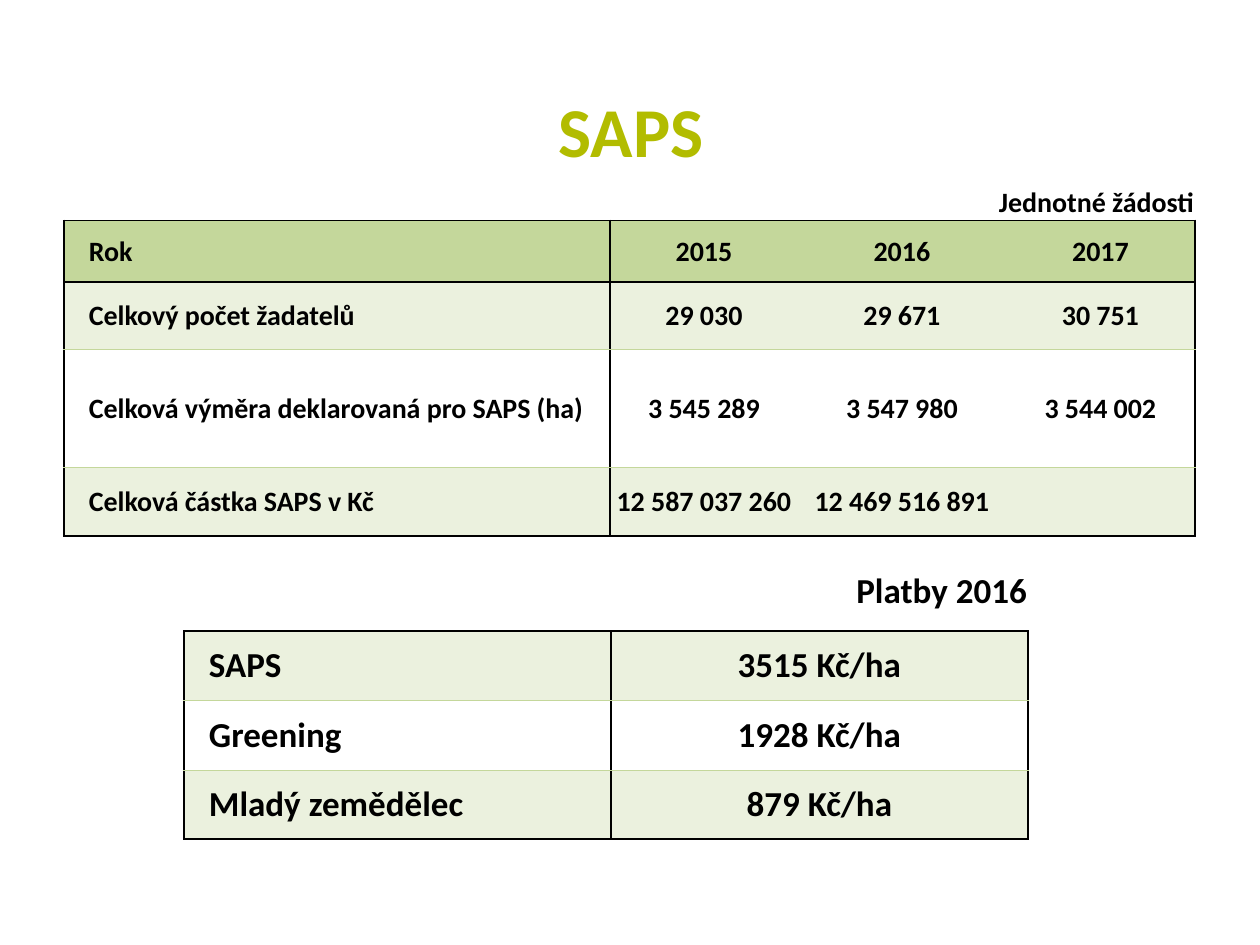
"""Build the SAPS slide with its applications table and payments table."""
from dataclasses import dataclass

from lxml import etree
from pptx import Presentation
from pptx import util as u
from pptx.dml.color import RGBColor
from pptx.enum import text
from pptx.oxml.ns import qn

LEFT, MID, RIGHT = text.PP_ALIGN.LEFT, text.PP_ALIGN.CENTER, text.PP_ALIGN.RIGHT


@dataclass(frozen=True)
class Theme:
    """Colours, type sizes and line widths."""
    font: str = "Calibri"
    ink: str = "000000"
    lime: str = "B2BC00"
    head: str = "C4D79B"
    pale: str = "EBF1DE"
    title: int = 40
    large: int = 20
    small: int = 16
    thick: float = 1
    thin: float = 0.5


def px(n):
    """Turn pixels into EMU."""
    return u.Emu(round(n * 914400 / 126))


def put(obj, vals):
    """Set attributes from a dict."""
    for key, val in vals.items():
        setattr(obj, key, val)


class Deck:
    """Hold the theme and the current slide."""

    def __init__(self, theme):
        """Start a file with one title-only slide."""
        self.theme = theme
        self.file = Presentation()
        put(self.file, {"slide_width": px(1260), "slide_height": px(945)})
        self.slide = self.file.slides.add_slide(self.file.slide_layouts[5])

    def label(self, para, words, size, color, align):
        """Add bold words to a paragraph."""
        para.alignment = align
        run = para.add_run()
        run.text = words
        put(run.font, {"name": self.theme.font, "size": u.Pt(size), "bold": True})
        run.font.color.rgb = RGBColor.from_string(color)

    def title(self, words, box):
        """Place and fill the title."""
        shape = self.slide.shapes.title
        put(shape, dict(zip(("left", "top", "width", "height"), map(px, box))))
        shape.text_frame.vertical_anchor = text.MSO_ANCHOR.MIDDLE
        self.label(shape.text_frame.paragraphs[0], words,
                   self.theme.title, self.theme.lime, MID)

    def edge(self, cell, side, color):
        """Draw one cell border, or clear it when there is no colour."""
        wide = self.theme.thick if color == self.theme.ink else self.theme.thin
        line = etree.SubElement(cell._tc.get_or_add_tcPr(), qn("a:ln" + side),
                                w=str(u.Pt(wide)))
        if color:
            fill = etree.SubElement(line, qn("a:solidFill"))
            etree.SubElement(fill, qn("a:srgbClr"), val=color)
        else:
            etree.SubElement(line, qn("a:noFill"))

    def cell(self, cell, words, size, align, fill, edges):
        """Format and fill one table cell."""
        put(cell, {"margin_left": px(25 if align == LEFT else 1),
                   "margin_right": px(1), "margin_top": px(1), "margin_bottom": 0,
                   "vertical_anchor": text.MSO_ANCHOR.MIDDLE})
        for side, color in edges.items():
            self.edge(cell, side, color)
        if fill:
            cell.fill.solid()
            cell.fill.fore_color.rgb = RGBColor.from_string(fill)
        else:
            cell.fill.background()
        if words:
            self.label(cell.text_frame.paragraphs[0], words, size, self.theme.ink, align)

    def table(self, spot, cols, rows, data, size, fills, rules):
        """Add a table whose first row is a caption across all columns."""
        last = len(cols) - 1
        frame = self.slide.shapes.add_table(
            len(rows), len(cols), *map(px, (*spot, sum(cols), sum(rows))))
        grid = frame.table
        put(grid, {"first_row": False, "horz_banding": False})
        for col, wide in zip(grid.columns, cols):
            col.width = px(wide)
        for row, high in zip(grid.rows, rows):
            row.height = px(high)
        grid.cell(0, 0).merge(grid.cell(0, last))
        for r, line in enumerate(data):
            ink = self.theme.ink if r else None
            for c, words in enumerate(line + [""] * (last + 1 - len(line))):
                edges = {"L": ink if c < 2 else None,
                         "R": ink if c in (0, last) else None,
                         "T": rules[r], "B": rules[r + 1]}
                align = RIGHT if r == 0 else MID if c else LEFT
                self.cell(grid.cell(r, c), words, size, align, fills[r], edges)


def main():
    """Build and save the slide."""
    look = Theme()
    deck = Deck(look)
    ink, head, pale = look.ink, look.head, look.pale
    deck.table(
        (64, 185), [546, 188, 208, 189], [35, 62, 67, 118, 69],
        [["Jednotné žádosti"],
         ["Rok", "2015", "2016", "2017"],
         ["Celkový počet žadatelů", "29 030", "29 671", "30 751"],
         ["Celková výměra deklarovaná pro SAPS (ha)",
          "3 545 289", "3 547 980", "3 544 002"],
         ["Celková částka SAPS v Kč", "12 587 037 260", "12 469 516 891"]],
        look.small, [None, head, pale, None, pale],
        [None, ink, ink, head, head, ink])
    deck.table(
        (184, 552), [427, 417], [79, 69, 70, 69],
        [["Platby 2016"],
         ["SAPS", "3515 Kč/ha"],
         ["Greening", "1928 Kč/ha"],
         ["Mladý zemědělec", "879 Kč/ha"]],
        look.large, [None, pale, None, pale],
        [None, ink, head, head, ink])
    deck.title("SAPS", (64, 86, 1134, 87))
    deck.file.save("out.pptx")


if __name__ == "__main__":
    main()
